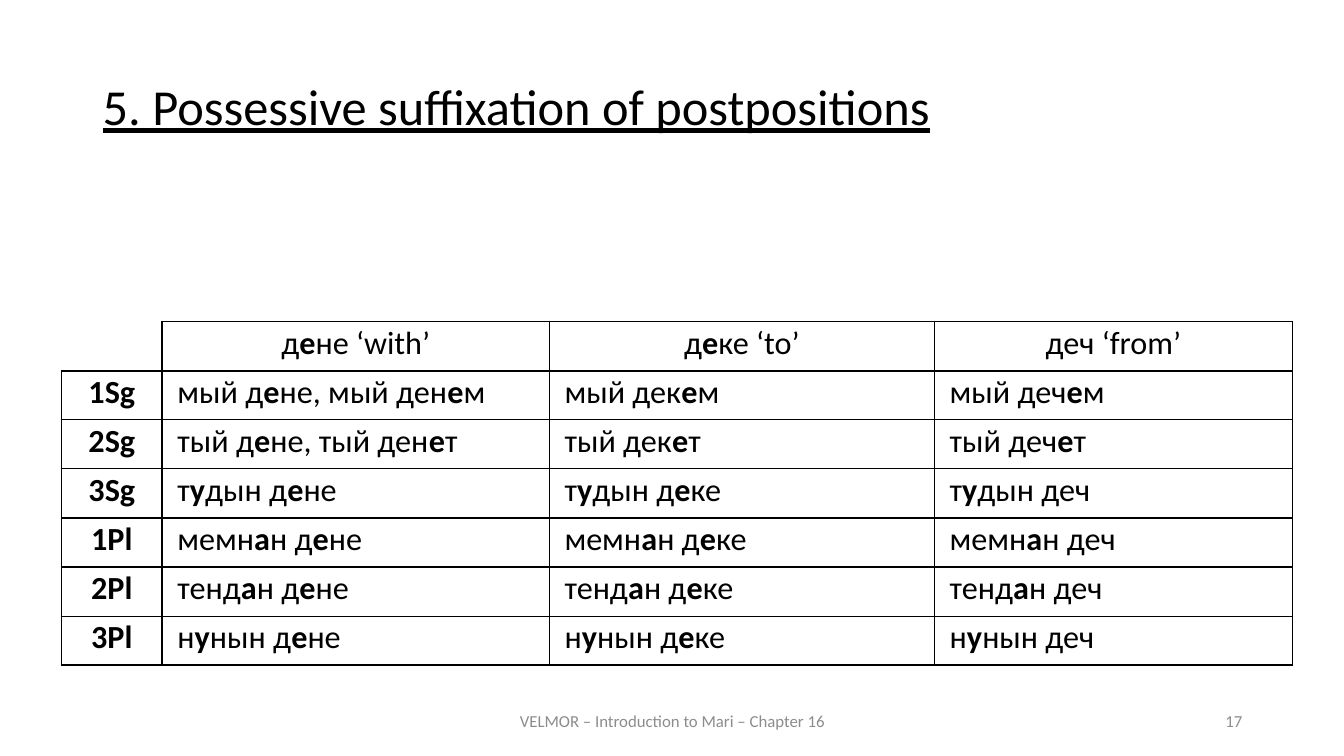
import pptx
import pptx.dml.color
import pptx.enum.text
import pptx.util
from lxml import etree
from pptx.oxml.ns import qn

Inches = pptx.util.Inches
Pt = pptx.util.Pt
ALIGN = pptx.enum.text.PP_ALIGN
ANCHOR = pptx.enum.text.MSO_ANCHOR
COLORS = {"text": "000000", "footer": "8C8C8C", "border": "000000"}


def write_text(frame, text, size, color="text", align=ALIGN.LEFT, underline=None):
    """Fill the first paragraph; parts between asterisks are bold."""
    paragraph = frame.paragraphs[0]
    paragraph.alignment = align
    for index, part in enumerate(text.split("*")):
        if part:
            run = paragraph.add_run()
            run.text = part
            run.font.name = "Calibri"
            run.font.size = Pt(size)
            run.font.bold = index % 2 == 1
            run.font.underline = underline
            run.font.color.rgb = pptx.dml.color.RGBColor.from_string(COLORS[color])
    return paragraph


def set_borders(cell, widths):
    """Set left, right, top and bottom border widths in points; 0 hides a side."""
    properties = cell._tc.get_or_add_tcPr()
    for side, width in zip("LRTB", widths):
        line = etree.SubElement(properties, qn(f"a:ln{side}"), w=str(Pt(width)))
        if width:
            fill = etree.SubElement(line, qn("a:solidFill"))
            etree.SubElement(fill, qn("a:srgbClr"), val=COLORS["border"])
        else:
            etree.SubElement(line, qn("a:noFill"))


presentation = pptx.Presentation()
presentation.slide_width = Inches(13.33)
presentation.slide_height = Inches(7.5)
slide = presentation.slides.add_slide(presentation.slide_layouts[6])

# Title
title = slide.shapes.add_textbox(Inches(0.92), Inches(0.76), Inches(11.5), Inches(0.83))
title.text_frame.word_wrap = True
heading = write_text(title.text_frame, "5. Possessive suffixation of postpositions", 36,
                     align=ALIGN.JUSTIFY, underline=True)
heading.line_spacing = 0.9
heading.space_before = Pt(12)

# Footer and slide number
for text, left, width, align in [
    ("VELMOR – Introduction to Mari – Chapter 16", 4.42, 4.5, ALIGN.CENTER),
    ("17", 9.42, 3, ALIGN.RIGHT),
]:
    footer = slide.shapes.add_textbox(Inches(left), Inches(6.95), Inches(width), Inches(0.4))
    footer.text_frame.word_wrap = True
    footer.text_frame.vertical_anchor = ANCHOR.MIDDLE
    write_text(footer.text_frame, text, 12, color="footer", align=align)

# Table of postpositions by person
rows = [
    ["", "д*е*не ‘with’", "д*е*ке ‘to’", "деч ‘from’"],
    ["*1Sg*", "мый д*е*не, мый ден*е*м", "мый дек*е*м", "мый деч*е*м"],
    ["*2Sg*", "тый д*е*не, тый ден*е*т", "тый дек*е*т", "тый деч*е*т"],
]
for person, pronoun in [("3Sg", "т*у*дын"), ("1Pl", "мемн*а*н"),
                        ("2Pl", "тенд*а*н"), ("3Pl", "н*у*нын")]:
    rows.append([f"*{person}*"] + [f"{pronoun} {word}" for word in ("д*е*не", "д*е*ке", "деч")])

column_widths = [1, 3.84, 3.82, 3.55]
table = slide.shapes.add_table(len(rows), len(column_widths), Inches(0.61), Inches(3.19),
                               Inches(sum(column_widths)), Inches(3.41)).table
table.first_row = False
table.horz_banding = False
for column, width in zip(table.columns, column_widths):
    column.width = Inches(width)

last_row = len(rows) - 1
for row_index, row in enumerate(rows):
    top = 1.5 if row_index <= 1 else 1
    bottom = 1.5 if row_index in (0, last_row) else 1
    for column_index, text in enumerate(row):
        cell = table.cell(row_index, column_index)
        cell.margin_left = cell.margin_right = Inches(0.15)
        cell.margin_top = Inches(0.02)
        cell.margin_bottom = 0
        is_corner = row_index == 0 and column_index == 0
        set_borders(cell, (0, 1.5, 0, 1.5) if is_corner else (1.5, 1.5, top, bottom))
        cell.fill.background()
        is_header = row_index == 0 or column_index == 0
        write_text(cell.text_frame, text, 23,
                   align=ALIGN.CENTER if is_header else ALIGN.JUSTIFY)

presentation.save("out.pptx")
